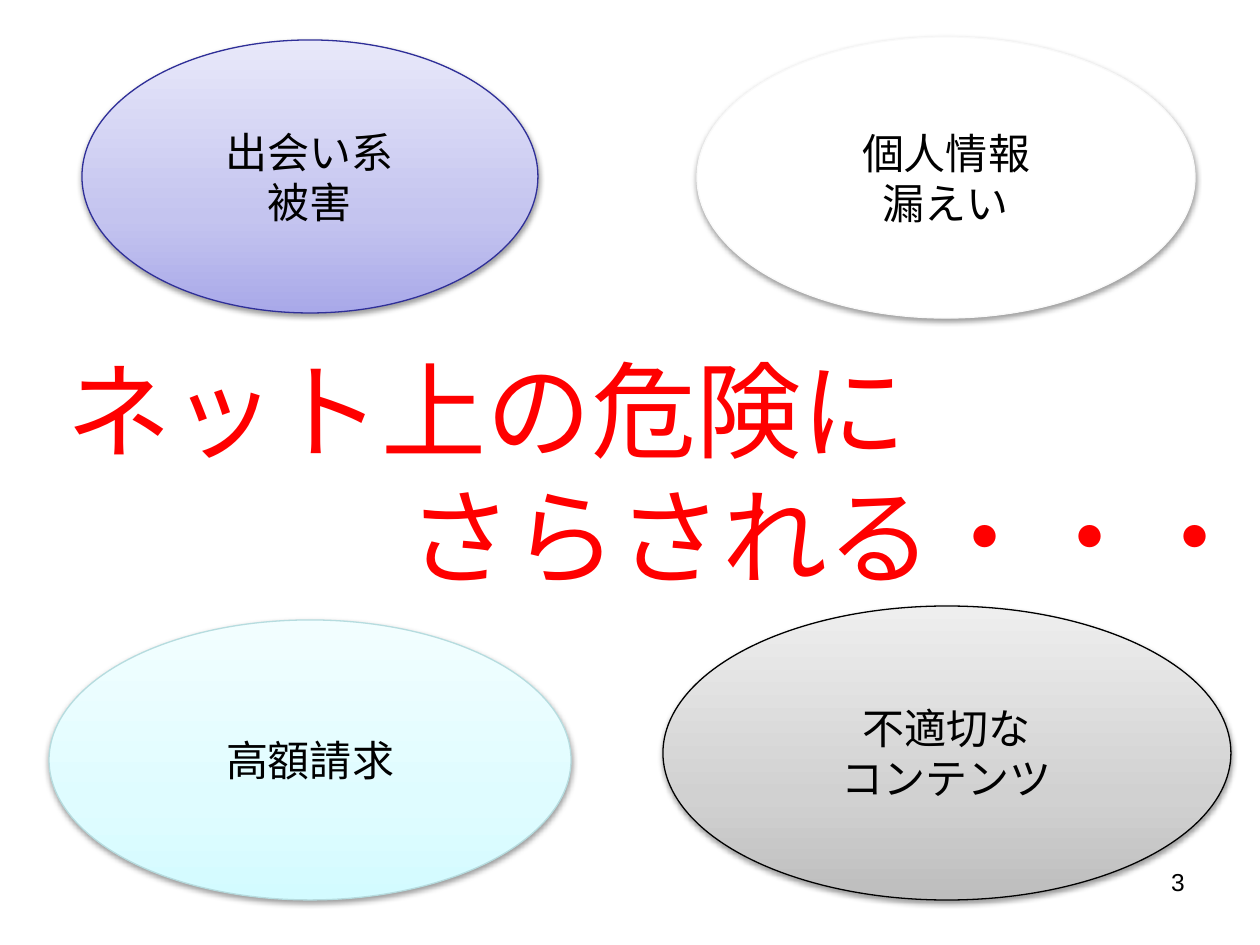
from copy import deepcopy
from dataclasses import dataclass

from lxml import etree
from pptx import Presentation
from pptx.dml.color import RGBColor
from pptx.enum.shapes import MSO_SHAPE
from pptx.enum.text import MSO_ANCHOR, MSO_AUTO_SIZE, PP_ALIGN
from pptx.oxml.ns import qn
from pptx.util import Emu, Pt

OVAL = MSO_SHAPE.OVAL
TOP, MID = MSO_ANCHOR.TOP, MSO_ANCHOR.MIDDLE
GROW = MSO_AUTO_SIZE.SHAPE_TO_FIT_TEXT
LEFT, MIDST, RIGHT = PP_ALIGN.LEFT, PP_ALIGN.CENTER, PP_ALIGN.RIGHT
SCALE = 914400 / 126
FONT = "Noto Sans CJK JP"
STOPS = (0, 0.35, 1)


@dataclass
class Box:
    x: int
    y: int
    w: int
    h: int


@dataclass
class Risk:
    box: Box
    fills: list[str]
    edge: str
    paras: list[str]


RISKS = [
    Risk(Box(82, 40, 456, 273), ["A9A9E9", "C4C4EF", "E8E8FA"], "2F2F98",
         ["出会い系", "被害"]),
    Risk(Box(49, 620, 522, 280), ["D3FBFF", "DFFCFF", "F2FEFF"], "B6DCDF",
         ["高額請求"]),
    Risk(Box(697, 37, 498, 281), ["FFFFFF"], "F9F9F9",
         ["個人情報", "漏えい"]),
    Risk(Box(663, 606, 568, 294), ["BDBDBD", "D1D1D1", "EEEEEE"], "000000",
         ["不適切な\nコンテンツ"]),
]


def px(n: int) -> Emu:
    return Emu(round(n * SCALE))


def color(code: str) -> RGBColor:
    return RGBColor.from_string(code)


def place(shape, box: Box) -> None:
    shape.left, shape.top = px(box.x), px(box.y)
    shape.width, shape.height = px(box.w), px(box.h)


def add_run(para, text: str, size: int, code: str, face: str) -> None:
    run = para.add_run()
    run.text = text
    font = run.font
    font.size = Pt(size)
    font.color.rgb = color(code)
    font.name = face
    east = etree.SubElement(run._r.get_or_add_rPr(), qn("a:ea"))
    east.set("typeface", face)


def write(frame, paras: list[str], aligns: list[PP_ALIGN], size: int,
          code: str = "000000", face: str = FONT) -> None:
    for i, (text, align) in enumerate(zip(paras, aligns)):
        para = frame.add_paragraph() if i else frame.paragraphs[0]
        para.alignment = align
        for j, line in enumerate(text.split("\n")):
            if j:
                para.add_line_break()
            add_run(para, line, size, code, face)


def shade(shape, codes: list[str]) -> None:
    fill = shape.fill
    if len(codes) == 1:
        fill.solid()
        fill.fore_color.rgb = color(codes[0])
        return
    fill.gradient()
    fill.gradient_angle = 90
    stops = shape._element.spPr.find(".//" + qn("a:gsLst"))
    stops.append(deepcopy(stops[0]))
    for stop, spot, code in zip(fill.gradient_stops, STOPS, codes):
        stop.position = spot
        stop.color.rgb = color(code)


def add_shadow(shape) -> None:
    shape.shadow.inherit = False
    effects = shape._element.spPr.find(qn("a:effectLst"))
    outer = etree.SubElement(effects, qn("a:outerShdw"), blurRad="40000",
                             dist="20000", dir="5400000", rotWithShape="0")
    tint = etree.SubElement(outer, qn("a:srgbClr"), val="000000")
    etree.SubElement(tint, qn("a:alpha"), val="38000")


def add_risk(slide, risk: Risk) -> None:
    box = risk.box
    shape = slide.shapes.add_shape(OVAL, px(box.x), px(box.y), px(box.w), px(box.h))
    shade(shape, risk.fills)
    shape.line.color.rgb = color(risk.edge)
    shape.line.width = Pt(0.75)
    add_shadow(shape)
    frame = shape.text_frame
    frame.word_wrap = False
    frame.vertical_anchor = MID
    write(frame, risk.paras, [MIDST] * len(risk.paras), 24)


def add_title(slide) -> None:
    title = slide.shapes.title
    place(title, Box(54, 339, 1206, 267))
    frame = title.text_frame
    frame.word_wrap = True
    frame.auto_size = GROW
    frame.vertical_anchor = TOP
    write(frame, ["ネット上の危険に", "さらされる・・・"], [LEFT, RIGHT], 60, "FF0000")


def add_number(slide) -> None:
    label = slide.shapes.add_textbox(px(903), px(861), px(294), px(66))
    label.text_frame.word_wrap = True
    write(label.text_frame, ["3"], [RIGHT], 14, face="Arial")


def main() -> None:
    deck = Presentation()
    deck.slide_width, deck.slide_height = px(1260), px(945)
    slide = deck.slides.add_slide(deck.slide_layouts[5])
    for risk in RISKS:
        add_risk(slide, risk)
    add_title(slide)
    add_number(slide)
    deck.save("out.pptx")


if __name__ == "__main__":
    main()
